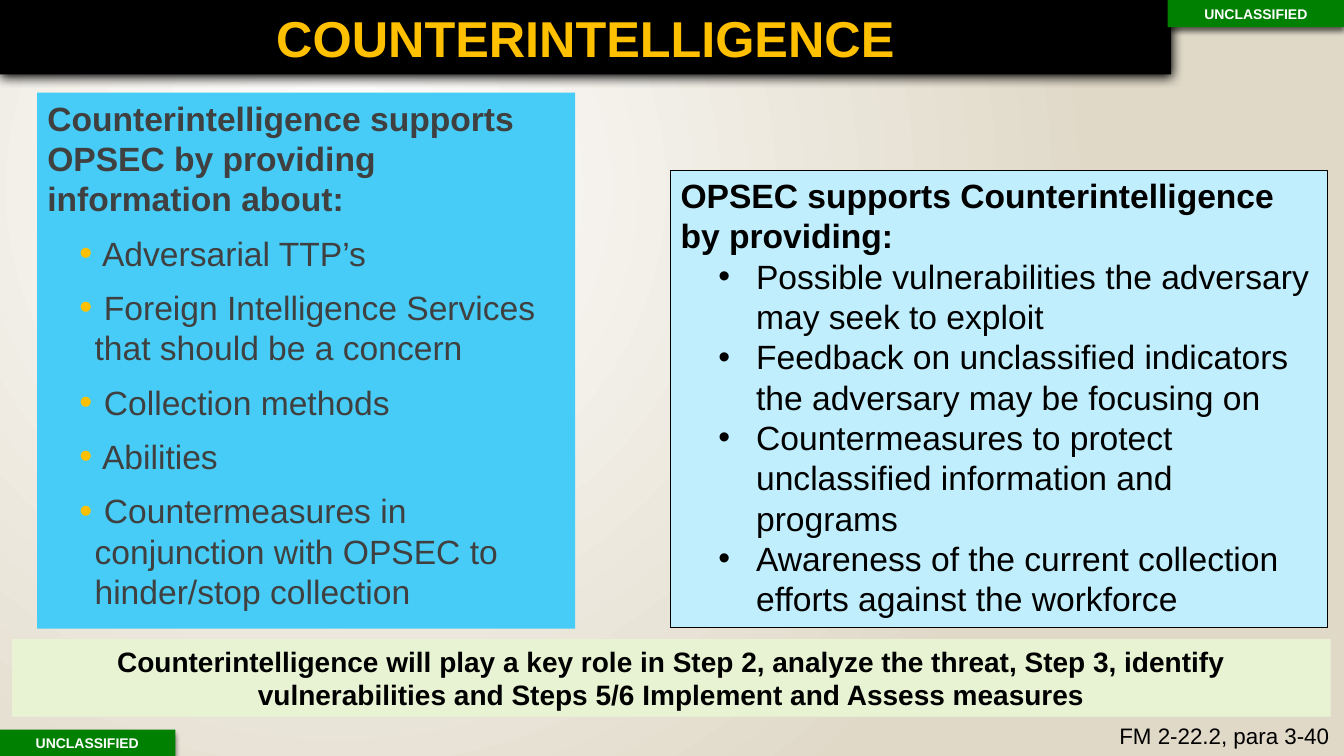
from lxml.etree import SubElement
from pptx import Presentation
from pptx.dml.color import RGBColor
from pptx.enum.shapes import MSO_SHAPE
from pptx.enum.text import MSO_ANCHOR, MSO_AUTO_SIZE, PP_ALIGN
from pptx.oxml.ns import qn
from pptx.util import Pt

BLACK = RGBColor(0, 0, 0)
WHITE = RGBColor(255, 255, 255)
SAND = RGBColor(0xE0, 0xD9, 0xC8)
GREEN = RGBColor(0, 0x80, 0)
GOLD = RGBColor(0xFF, 0xC0, 0)
GREY = RGBColor(0x40, 0x40, 0x40)
BLUE = RGBColor(0x46, 0xCC, 0xF6)
PALE = RGBColor(0xC1, 0xEE, 0xFC)
LIME = RGBColor(0xE8, 0xF3, 0xD4)

GIVES = [
    " Adversarial TTP’s",
    " Foreign Intelligence Services that should be a concern",
    " Collection methods",
    " Abilities",
    " Countermeasures in conjunction with OPSEC to hinder/stop collection",
]
GETS = [
    "Possible vulnerabilities the adversary may seek to exploit",
    "Feedback on unclassified indicators the adversary may be focusing on",
    "Countermeasures to protect unclassified information and programs",
    "Awareness of the current collection efforts against the workforce",
]


def node(parent, tag, **attrs):
    return SubElement(parent, qn(tag), {k: str(v) for k, v in attrs.items()})


class Deck:
    face = "Arial"

    def __init__(self):
        self.prs = Presentation()
        self.prs.slide_width, self.prs.slide_height = Pt(960), Pt(540)
        self.slide = self.prs.slides.add_slide(self.prs.slide_layouts[1])

    def ground(self, inner, outer):
        """Fill the background with a radial gradient."""
        fill = self.slide.background.fill
        fill.gradient()
        for stop, color, pos in zip(fill.gradient_stops, (inner, outer), (0, 1)):
            stop.color.rgb = color
            stop.position = pos
        grad = self.slide.element.find(".//" + qn("a:gradFill"))
        grad.remove(grad.find(qn("a:lin")))
        ring = node(grad, "a:path", path="circle")
        node(ring, "a:fillToRect", l=50000, t=50000, r=100000, b=100000)

    def place(self, shape, box, fill):
        shape.left, shape.top, shape.width, shape.height = map(Pt, box)
        shape.fill.solid()
        shape.fill.fore_color.rgb = fill
        shape.line.fill.background()
        shape.shadow.inherit = False
        frame = shape.text_frame
        frame.word_wrap = True
        frame.auto_size = MSO_AUTO_SIZE.NONE
        frame.vertical_anchor = MSO_ANCHOR.TOP
        return shape

    def rect(self, box, fill):
        shape = self.slide.shapes.add_shape(MSO_SHAPE.RECTANGLE, *map(Pt, box))
        return self.place(shape, box, fill)

    def shade(self, shape, alpha, blur, dist):
        """Cast a black shadow straight down."""
        effects = shape.element.spPr.find(qn("a:effectLst"))
        cast = node(effects, "a:outerShdw", blurRad=Pt(blur), dist=Pt(dist),
                    dir=5400000, algn="ctr", rotWithShape=0)
        tint = node(cast, "a:srgbClr", val=BLACK)
        node(tint, "a:alpha", val=alpha * 1000)

    def style(self, para, size, color, bold=False, align=PP_ALIGN.LEFT):
        para.alignment = align
        font = para.font
        font.name, font.size, font.bold = self.face, Pt(size), bold
        font.color.rgb = color

    def text(self, shape, words, size, color, bold=True, align=PP_ALIGN.CENTER):
        para = shape.text_frame.paragraphs[0]
        para.text = words
        self.style(para, size, color, bold, align)

    def list(self, shape, head, items, color, level, left, hang, gap, dot=None):
        """Write a bold heading and the bulleted items below it."""
        frame = shape.text_frame
        first = frame.paragraphs[0]
        first.text = head
        props = first._p.get_or_add_pPr()
        props.set("marL", "0")
        props.set("indent", "0")
        node(props, "a:buNone")
        first.space_before = Pt(0)
        self.style(first, 24, color, True)
        for item in items:
            para = frame.add_paragraph()
            para.text = item
            para.level = level
            props = para._p.get_or_add_pPr()
            props.set("marL", str(Pt(left)))
            props.set("indent", str(Pt(-hang)))
            if dot:
                node(node(props, "a:buClr"), "a:srgbClr", val=dot)
                node(props, "a:buSzPct", val=110000)
            node(props, "a:buFont", typeface=self.face)
            node(props, "a:buChar", char="•")
            para.space_before = Pt(gap)
            self.style(para, 24, color)

    def label(self, left, top):
        tag = self.rect((left, top, 126, 19.4), GREEN)
        self.shade(tag, 60, 4, 3)
        self.text(tag, "UNCLASSIFIED", 10, WHITE)
        tag.text_frame.vertical_anchor = MSO_ANCHOR.MIDDLE

    def title(self, box, words):
        bar = self.place(self.slide.shapes.title, box, BLACK)
        self.shade(bar, 100, 8.5, 1)
        frame = bar.text_frame
        frame.vertical_anchor = MSO_ANCHOR.MIDDLE
        frame.margin_left = frame.margin_right = Pt(5)
        frame.margin_top = frame.margin_bottom = Pt(3)
        self.text(bar, words, 36, GOLD)

    def note(self, box, words):
        shape = self.slide.shapes.add_textbox(*map(Pt, box))
        shape.text_frame.word_wrap = False
        self.text(shape, words, 16, BLACK, False, PP_ALIGN.LEFT)


def main():
    deck = Deck()
    deck.ground(WHITE, SAND)
    deck.label(-0.7, 521.2)
    deck.label(834, 0)
    body = deck.place(deck.slide.placeholders[1], (26.6, 66.2, 384.3, 382.8), BLUE)
    deck.list(body, "Counterintelligence supports OPSEC by providing information about:",
              GIVES, GREY, level=2, left=33.8, hang=10.8, gap=10, dot=GOLD)
    panel = deck.rect((479, 121.5, 469, 327), PALE)
    panel.line.color.rgb = BLACK
    panel.line.width = Pt(0.75)
    deck.list(panel, "OPSEC supports Counterintelligence by providing:",
              GETS, BLACK, level=1, left=54, hang=27, gap=0)
    deck.note((792.5, 512, 166.5, 26.6), "FM 2-22.2, para 3-40")
    foot = deck.rect((8.6, 456.5, 941.8, 55.5), LIME)
    deck.text(foot, "Counterintelligence will play a key role in Step 2, analyze the threat, "
              "Step 3, identify vulnerabilities and Steps 5/6 Implement and Assess measures",
              20, BLACK)
    deck.title((0, 0, 836.6, 53.2), "COUNTERINTELLIGENCE")
    deck.prs.save("out.pptx")


if __name__ == "__main__":
    main()
